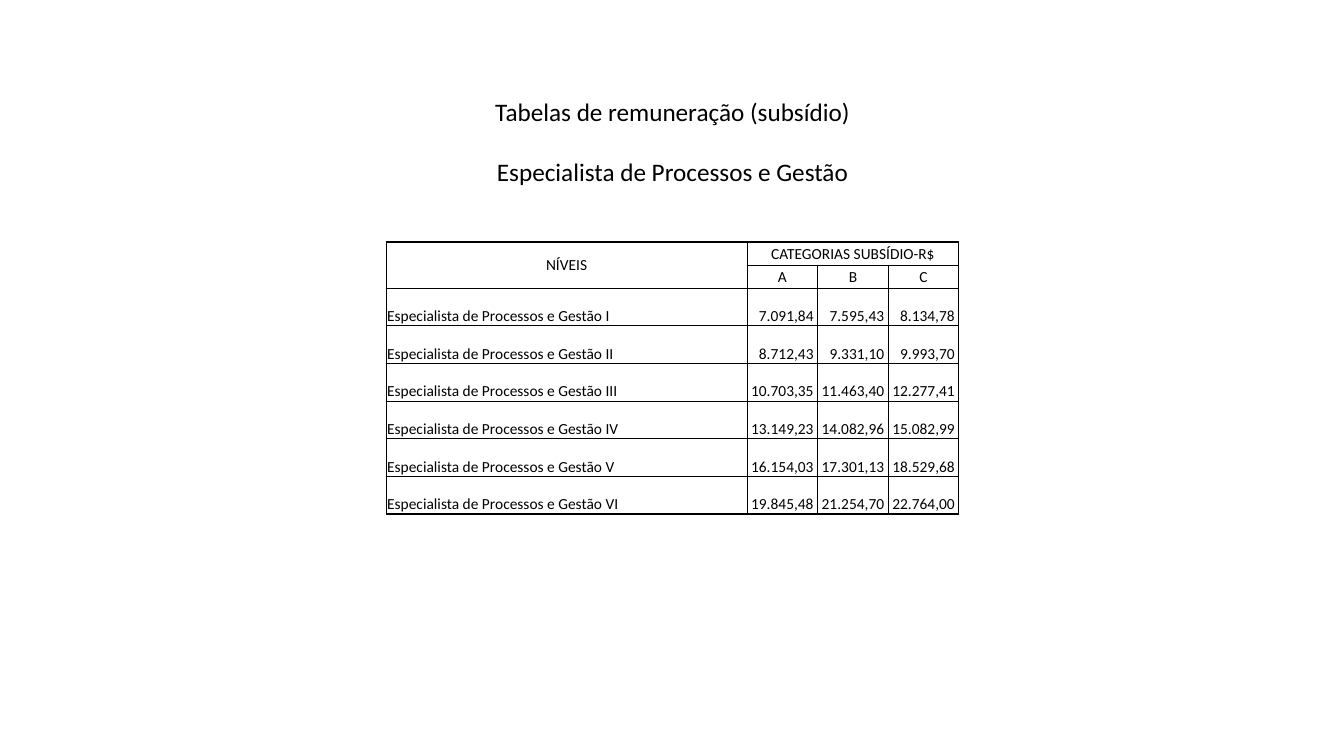
from lxml.etree import SubElement
from pptx import Presentation
from pptx.dml.color import RGBColor
from pptx.enum.text import MSO_ANCHOR, MSO_AUTO_SIZE, PP_ALIGN
from pptx.oxml import parse_xml
from pptx.oxml.ns import nsdecls, qn
from pptx.util import Inches, Pt

BLACK = RGBColor(0, 0, 0)
FONT = "Calibri"
TITLE_LINES = ["Tabelas de remuneração (subsídio)", "Especialista de Processos e Gestão"]
CATEGORIES = ["A", "B", "C"]
SALARIES = {
    "I": ["7.091,84", "7.595,43", "8.134,78"],
    "II": ["8.712,43", "9.331,10", "9.993,70"],
    "III": ["10.703,35", "11.463,40", "12.277,41"],
    "IV": ["13.149,23", "14.082,96", "15.082,99"],
    "V": ["16.154,03", "17.301,13", "18.529,68"],
    "VI": ["19.845,48", "21.254,70", "22.764,00"],
}
HEADER_HEIGHT = Inches(0.23)
BODY_HEIGHT = Inches(2.24)
LEVEL_WIDTH = Inches(3.58)
CATEGORY_WIDTH = Inches(0.7)


def format_paragraph(para, size, alignment):
    para.alignment = alignment
    for span in para.runs:
        span.font.name = FONT
        span.font.size = Pt(size)
        span.font.bold = False
        span.font.color.rgb = BLACK


def add_title(page):
    box = page.shapes.title
    box.left, box.top = Inches(1.99), Inches(0.91)
    box.width, box.height = Inches(9.36), Inches(1.01)
    frame = box.text_frame
    frame.text = "\n".join(TITLE_LINES)
    frame.word_wrap = True
    frame.auto_size = MSO_AUTO_SIZE.NONE
    frame.vertical_anchor = MSO_ANCHOR.TOP
    for para in frame.paragraphs:
        format_paragraph(para, 18, PP_ALIGN.CENTER)
    frame.paragraphs[1].space_before = Pt(21)


def add_borders(cell):
    properties = cell._tc.get_or_add_tcPr()
    for position, side in enumerate(["lnL", "lnR", "lnT", "lnB"]):
        line = parse_xml(f'<a:{side} {nsdecls("a")} w="{Pt(1)}"/>')
        fill = SubElement(line, qn("a:solidFill"))
        SubElement(fill, qn("a:srgbClr"), val=str(BLACK))
        properties.insert(position, line)


def style_cell(cell):
    cell.margin_left = cell.margin_right = cell.margin_top = Inches(0.01)
    cell.margin_bottom = 0
    cell.fill.background()
    add_borders(cell)


def write_cell(cell, text, alignment, anchor):
    cell.text_frame.text = text
    cell.vertical_anchor = anchor
    format_paragraph(cell.text_frame.paragraphs[0], 11, alignment)


def write_header(table):
    table.cell(0, 0).merge(table.cell(1, 0))
    table.cell(0, 1).merge(table.cell(0, len(CATEGORIES)))
    labels = [(0, 0, "NÍVEIS"), (0, 1, "CATEGORIAS SUBSÍDIO-R$")]
    labels += [(1, column, name) for column, name in enumerate(CATEGORIES, 1)]
    for row, column, text in labels:
        write_cell(table.cell(row, column), text, PP_ALIGN.CENTER, MSO_ANCHOR.MIDDLE)


def write_salaries(table):
    for row, (level, amounts) in enumerate(SALARIES.items(), 2):
        name = f"Especialista de Processos e Gestão {level}"
        write_cell(table.cell(row, 0), name, PP_ALIGN.LEFT, MSO_ANCHOR.BOTTOM)
        for column, amount in enumerate(amounts, 1):
            cell = table.cell(row, column)
            write_cell(cell, amount, PP_ALIGN.RIGHT, MSO_ANCHOR.BOTTOM)
            cell.margin_right = Inches(0.04)


def add_salary_table(page):
    width = LEVEL_WIDTH + len(CATEGORIES) * CATEGORY_WIDTH
    height = 2 * HEADER_HEIGHT + BODY_HEIGHT
    table = page.shapes.add_table(
        len(SALARIES) + 2, len(CATEGORIES) + 1, Inches(3.83), Inches(2.4), width, height
    ).table
    table.first_row = table.horz_banding = False
    for index, column in enumerate(table.columns):
        column.width = CATEGORY_WIDTH if index else LEVEL_WIDTH
    for index, row in enumerate(table.rows):
        row.height = HEADER_HEIGHT if index < 2 else BODY_HEIGHT // len(SALARIES)
    for cell in table.iter_cells():
        style_cell(cell)
    write_header(table)
    write_salaries(table)


def main():
    deck = Presentation()
    deck.slide_width, deck.slide_height = Inches(13.33), Inches(7.5)
    page = deck.slides.add_slide(deck.slide_layouts[5])
    add_title(page)
    add_salary_table(page)
    deck.save("out.pptx")


if __name__ == "__main__":
    main()
